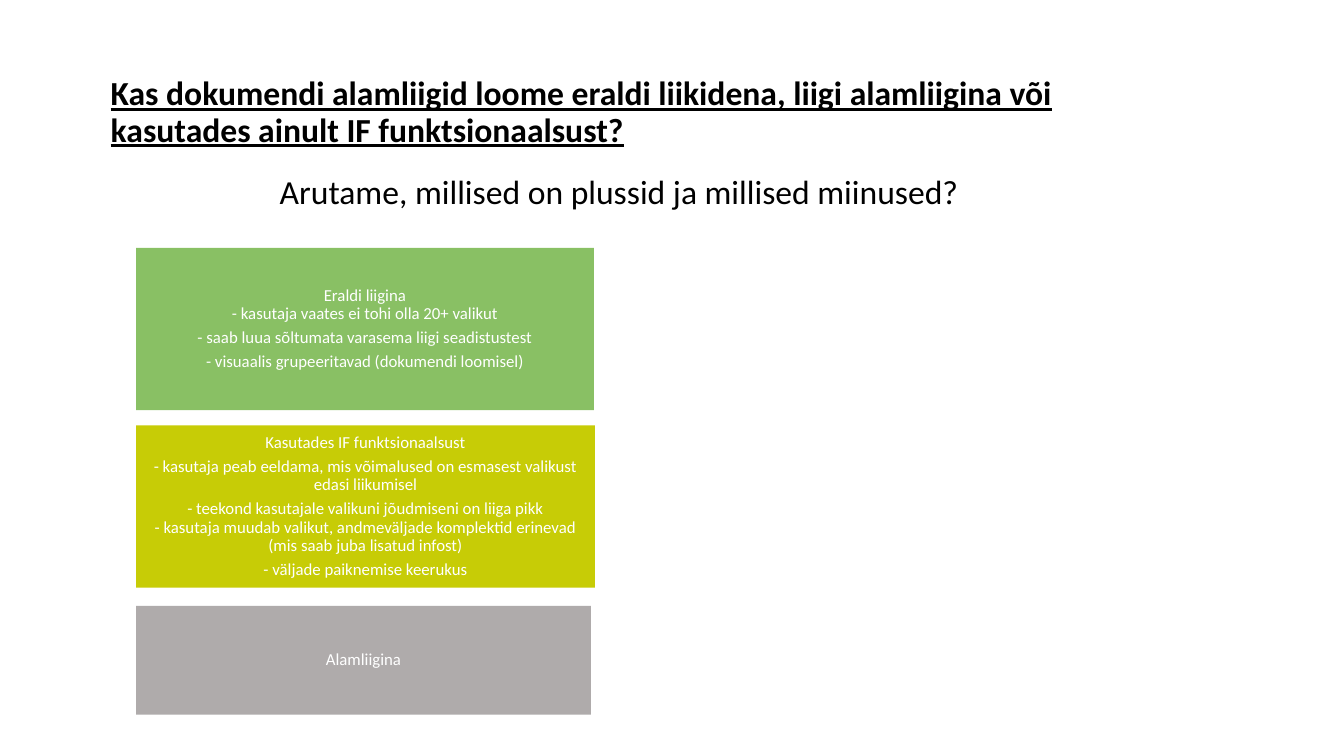
import pptx
import pptx.util
import pptx.dml.color
import pptx.enum.shapes
import pptx.enum.text

Inches = pptx.util.Inches
Pt = pptx.util.Pt
Align = pptx.enum.text.PP_ALIGN
Anchor = pptx.enum.text.MSO_ANCHOR

TITLE = "Kas dokumendi alamliigid loome eraldi liikidena, liigi alamliigina või kasutades ainult IF funktsionaalsust?"
QUESTION = "Arutame, millised on plussid ja millised miinused?"
OPTIONS = [
    {"top": 2.46, "width": 4.54, "height": 1.61, "fill": "89C064", "lines": [
        "Eraldi liigina\v- kasutaja vaates ei tohi olla 20+ valikut",
        "- saab luua sõltumata varasema liigi seadistustest",
        "- visuaalis grupeeritavad (dokumendi loomisel)",
    ]},
    {"top": 4.22, "width": 4.55, "height": 1.61, "fill": "C7CC06", "lines": [
        "Kasutades IF funktsionaalsust",
        "- kasutaja peab eeldama, mis võimalused on esmasest valikust edasi liikumisel",
        "- teekond kasutajale valikuni jõudmiseni on liiga pikk\v"
        "- kasutaja muudab valikut, andmeväljade komplektid erinevad (mis saab juba lisatud infost)",
        "- väljade paiknemise keerukus",
    ]},
    {"top": 6.01, "width": 4.51, "height": 1.08, "fill": "AFABAB", "lines": ["Alamliigina"]},
]
OPTION_LEFT = 1.35
OPTION_MARGIN = 0.05


def color(value):
    return pptx.dml.color.RGBColor.from_string(value)


def write(box, lines, size, ink, align, anchor, after=0, strong=False):
    frame = box.text_frame
    frame.word_wrap = True
    frame.vertical_anchor = anchor
    frame.text = "\n".join(lines)
    for para in frame.paragraphs:
        para.alignment = align
        para.line_spacing = 0.9
        para.space_after = Pt(after)
        for span in para.runs:
            span.font.name = "Calibri"
            span.font.size = Pt(size)
            span.font.color.rgb = color(ink)
            span.font.bold = strong
            span.font.underline = strong


def add_option(page, option):
    box = page.shapes.add_shape(
        pptx.enum.shapes.MSO_SHAPE.RECTANGLE, Inches(OPTION_LEFT), Inches(option["top"]),
        Inches(option["width"]), Inches(option["height"]))
    box.shadow.inherit = False
    box.fill.solid()
    box.fill.fore_color.rgb = color(option["fill"])
    box.line.fill.background()
    frame = box.text_frame
    frame.margin_left = frame.margin_right = Inches(OPTION_MARGIN)
    frame.margin_top = frame.margin_bottom = Inches(OPTION_MARGIN)
    write(box, option["lines"], 12, "FFFFFF", Align.CENTER, Anchor.MIDDLE, after=4.2)


def main():
    deck = pptx.Presentation()
    deck.slide_width = Inches(13.33)
    deck.slide_height = Inches(7.5)
    page = deck.slides.add_slide(deck.slide_layouts[6])
    title = page.shapes.add_textbox(Inches(1), Inches(0.75), Inches(10), Inches(0.78))
    write(title, [TITLE], 24, "000000", Align.LEFT, Anchor.BOTTOM, strong=True)
    question = page.shapes.add_textbox(Inches(1.14), Inches(1.69), Inches(10), Inches(0.5))
    write(question, [QUESTION], 24, "000000", Align.CENTER, Anchor.TOP)
    for option in OPTIONS:
        add_option(page, option)
    deck.save("out.pptx")


if __name__ == "__main__":
    main()
